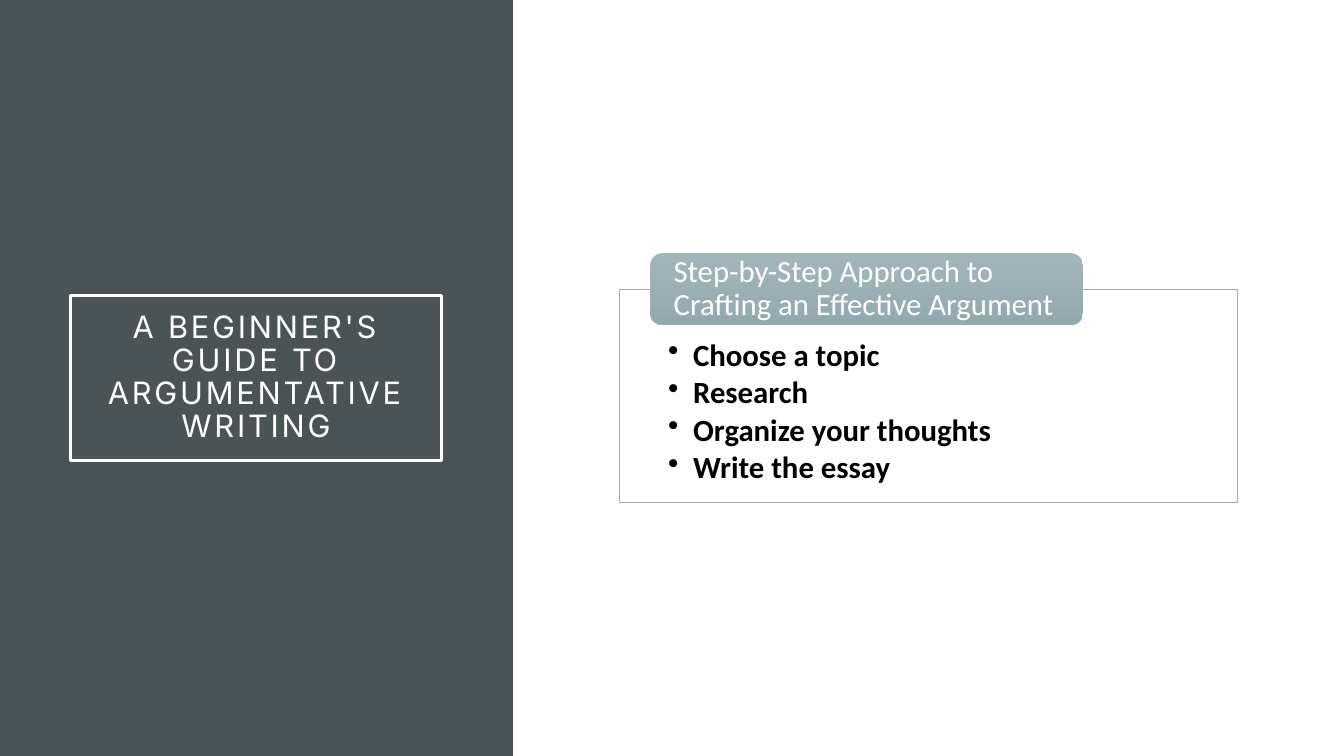
from lxml import etree
from pptx import Presentation
from pptx.dml.color import RGBColor
from pptx.enum import shapes, text
from pptx.oxml import ns
from pptx.util import Cm, Pt

SLATE = RGBColor(0x4A, 0x53, 0x56)
WHITE = RGBColor(0xFF, 0xFF, 0xFF)
BLACK = RGBColor(0x00, 0x00, 0x00)
MIST = RGBColor(0x9B, 0xAF, 0xB5)
MIST_LIGHT = RGBColor(0xA3, 0xB5, 0xBB)
MIST_DARK = RGBColor(0x93, 0xA9, 0xAF)
STEPS = ["Choose a topic", "Research", "Organize your thoughts", "Write the essay"]


def add_block(kind, left, top, width, height):
    sp = s.shapes.add_shape(kind, Cm(left), Cm(top), Cm(width), Cm(height))
    sp.shadow.inherit = False
    sp.line.fill.background()
    return sp


def set_text(sp, lines, font, color, align, anchor, insets):
    tf = sp.text_frame
    tf.text = "\n".join(lines)
    tf.word_wrap = True
    tf.auto_size = text.MSO_AUTO_SIZE.NONE
    tf.vertical_anchor = anchor
    tf.margin_left, tf.margin_top, tf.margin_right, tf.margin_bottom = map(Cm, insets)
    for p in tf.paragraphs:
        p.alignment = align
        p.line_spacing = 0.9
        p.font.name = font
        p.font.size = Pt(22)
        p.font.color.rgb = color
    return tf


prs = Presentation()
prs.slide_width, prs.slide_height = Cm(33.87), Cm(19.05)
s = prs.slides.add_slide(prs.slide_layouts[5])

panel = add_block(shapes.MSO_SHAPE.RECTANGLE, 0, 0, 12.93, 19.05)
panel.fill.solid()
panel.fill.fore_color.rgb = SLATE

title = s.shapes.title
panel.element.addnext(title.element)
title.left, title.top, title.width, title.height = Cm(1.78), Cm(7.44), Cm(9.35), Cm(4.17)
title.line.color.rgb = WHITE
title.line.width = Pt(2.5)
tf = set_text(title, ["A BEGINNER'S GUIDE TO ARGUMENTATIVE WRITING"], "Inter", WHITE,
              text.PP_ALIGN.CENTER, text.MSO_ANCHOR.MIDDLE, (0.51, 0.51, 0.51, 0.51))
tf.paragraphs[0].runs[0].font._element.set("spc", "200")

box = add_block(shapes.MSO_SHAPE.RECTANGLE, 15.62, 7.29, 15.57, 5.38)
box.fill.solid()
box.fill.fore_color.rgb = WHITE
box.line.color.rgb = MIST
box.line.width = Pt(0.5)
tf = set_text(box, STEPS, "Calibri", BLACK,
              text.PP_ALIGN.LEFT, text.MSO_ANCHOR.TOP, (1.22, 1.27, 1.22, 0.43))
for p in tf.paragraphs:
    p.font.bold = True
    p.space_after = Pt(3)
    pPr = p._p.get_or_add_pPr()
    pPr.set("marL", str(Cm(0.63)))
    pPr.set("indent", str(Cm(-0.63)))
    bullet = etree.Element(ns.qn("a:buChar"), char="•")
    pPr.find(ns.qn("a:defRPr")).addprevious(bullet)

header = add_block(shapes.MSO_SHAPE.ROUNDED_RECTANGLE, 16.5, 6.38, 10.9, 1.81)
header.fill.gradient()
header.fill.gradient_angle = 270
for stop, color in zip(header.fill.gradient_stops, (MIST_LIGHT, MIST_DARK)):
    stop.color.rgb = color
set_text(header, ["Step-by-Step Approach to Crafting an Effective Argument"], "Calibri", WHITE,
         text.PP_ALIGN.LEFT, text.MSO_ANCHOR.MIDDLE, (0.5, 0, 0.5, 0))
header.left = Cm(16.39)

prs.save("out.pptx")
